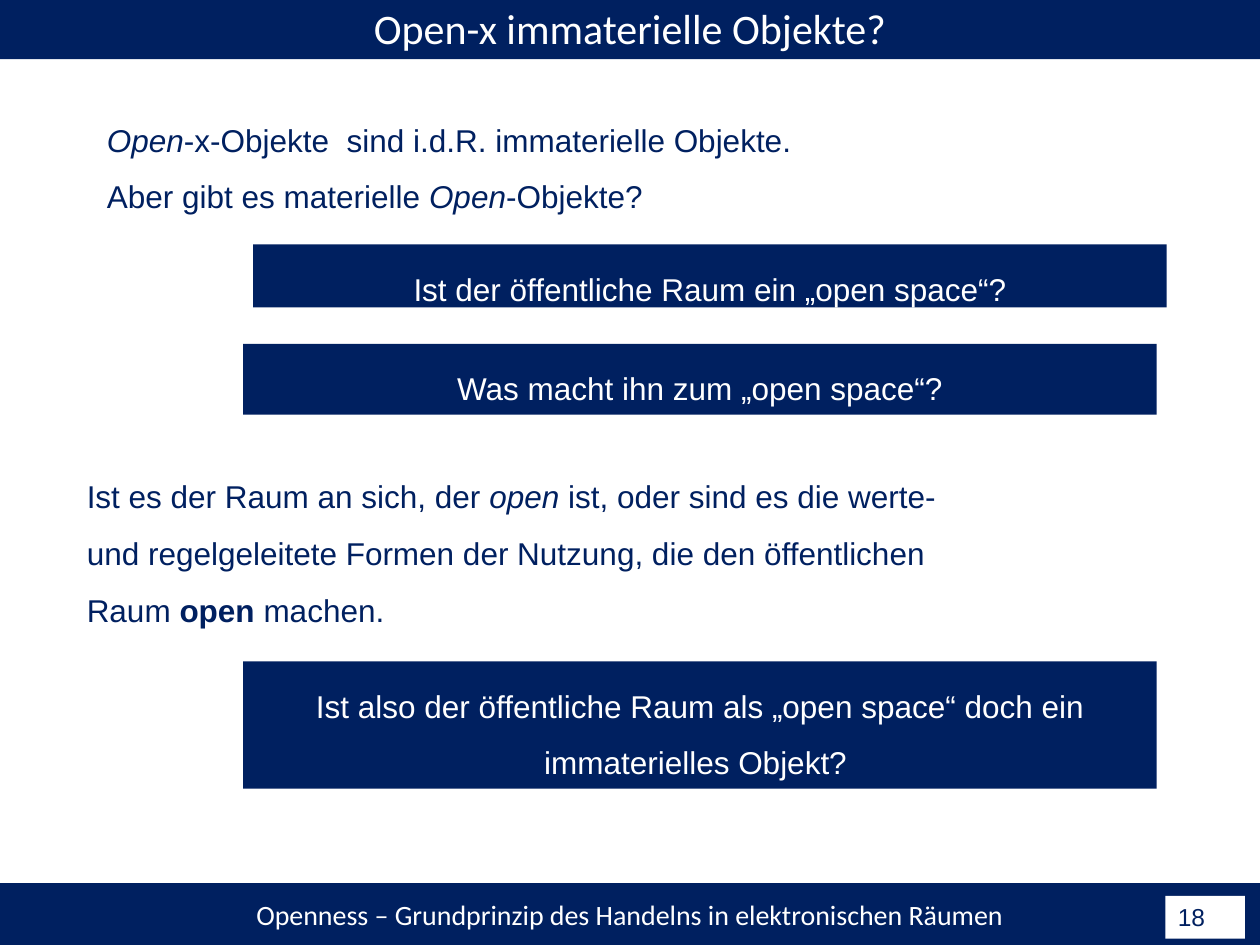
from pptx import Presentation
from pptx.dml.color import RGBColor
from pptx.enum.shapes import MSO_SHAPE
from pptx.enum.text import MSO_ANCHOR, PP_ALIGN
from pptx.util import Inches, Pt

RECTANGLE = MSO_SHAPE.RECTANGLE
TOP, MIDDLE = MSO_ANCHOR.TOP, MSO_ANCHOR.MIDDLE
LEFT, CENTER = PP_ALIGN.LEFT, PP_ALIGN.CENTER

SLIDE_WIDTH, SLIDE_HEIGHT = Inches(10), Inches(7.5)
NAVY, WHITE = "002060", "FFFFFF"
TEXT_WIDTH = 72.5  # shared by paragraphs and question boxes, % of slide width
QUESTION_LEFT = 19.3


def color(hex_string):
    return RGBColor.from_string(hex_string)


def place(left, top, width, height):
    """Turn percentages of the slide's size into lengths."""
    return (int(SLIDE_WIDTH * left / 100), int(SLIDE_HEIGHT * top / 100),
            int(SLIDE_WIDTH * width / 100), int(SLIDE_HEIGHT * height / 100))


def write(shape, paragraphs, size=18, font="Arial", text_color=NAVY,
          align=LEFT, spacing=1.0, anchor=TOP):
    """Each paragraph is a list of (text, style) runs; style is '', 'i' or 'b'."""
    frame = shape.text_frame
    frame.word_wrap = True
    frame.vertical_anchor = anchor
    for index, runs in enumerate(paragraphs):
        paragraph = frame.add_paragraph() if index else frame.paragraphs[0]
        paragraph.alignment = align
        paragraph.line_spacing = spacing
        for text, style in runs:
            run = paragraph.add_run()
            run.text = text
            run.font.name = font
            run.font.size = Pt(size)
            run.font.italic = style == "i"
            run.font.bold = style == "b"
            run.font.color.rgb = color(text_color)


def add_box(slide, area, text, fill=NAVY, **text_format):
    shape = slide.shapes.add_shape(RECTANGLE, *place(*area))
    shape.shadow.inherit = False
    shape.fill.solid()
    shape.fill.fore_color.rgb = color(fill)
    shape.line.fill.background()
    write(shape, [[(text, "")]], **text_format)
    return shape


def add_question(slide, top, height, text, left=QUESTION_LEFT):
    add_box(slide, (left, top, TEXT_WIDTH, height), text,
            text_color=WHITE, align=CENTER, spacing=1.5)


def add_body_text(slide, left, top, height, paragraphs):
    box = slide.shapes.add_textbox(*place(left, top, TEXT_WIDTH, height))
    write(box, paragraphs, spacing=1.5)


def main():
    presentation = Presentation()
    presentation.slide_width, presentation.slide_height = SLIDE_WIDTH, SLIDE_HEIGHT
    slide = presentation.slides.add_slide(presentation.slide_layouts[6])

    # Footer band and slide number
    footer = add_box(slide, (0, 93.47, 100, 6.53),
                     "Openness – Grundprinzip des Handelns in elektronischen Räumen",
                     size=16, font="Calibri", text_color=WHITE, align=CENTER,
                     anchor=MIDDLE)
    frame = footer.text_frame
    frame.margin_left = frame.margin_right = frame.margin_top = frame.margin_bottom = 0
    add_box(slide, (92.5, 94.8, 6.3, 4.53), "18", fill=WHITE, size=14)

    # Title band
    add_box(slide, (0, -0.4, 100, 6.67), "Open-x immaterielle Objekte?",
            size=24, font="Calibri", text_color=WHITE, align=CENTER)

    # Opening statement and its questions
    add_body_text(slide, 7.5, 10.13, 13.47, [
        [("Open", "i"), ("-x-Objekte  sind i.d.R. immaterielle Objekte.", "")],
        [("Aber gibt es materielle ", ""), ("Open", "i"), ("-Objekte?", "")],
    ])
    add_question(slide, 25.87, 6.67, "Ist der öffentliche Raum ein „open space“?",
                 left=20.1)
    add_question(slide, 36.4, 7.47, "Was macht ihn zum „open space“?")

    # Follow-up thought and closing question
    add_body_text(slide, 5.9, 47.87, 19.47, [
        [("Ist es der Raum an sich, der ", ""), ("open", "i"),
         (" ist, oder sind es die werte- und regelgeleitete Formen der Nutzung, "
          "die den öffentlichen Raum ", ""),
         ("open", "b"), (" machen.", "")],
    ])
    add_question(slide, 70, 13.47, "Ist also der öffentliche Raum als „open space“ "
                 "doch ein immaterielles Objekt? ")

    presentation.save("out.pptx")


if __name__ == "__main__":
    main()
